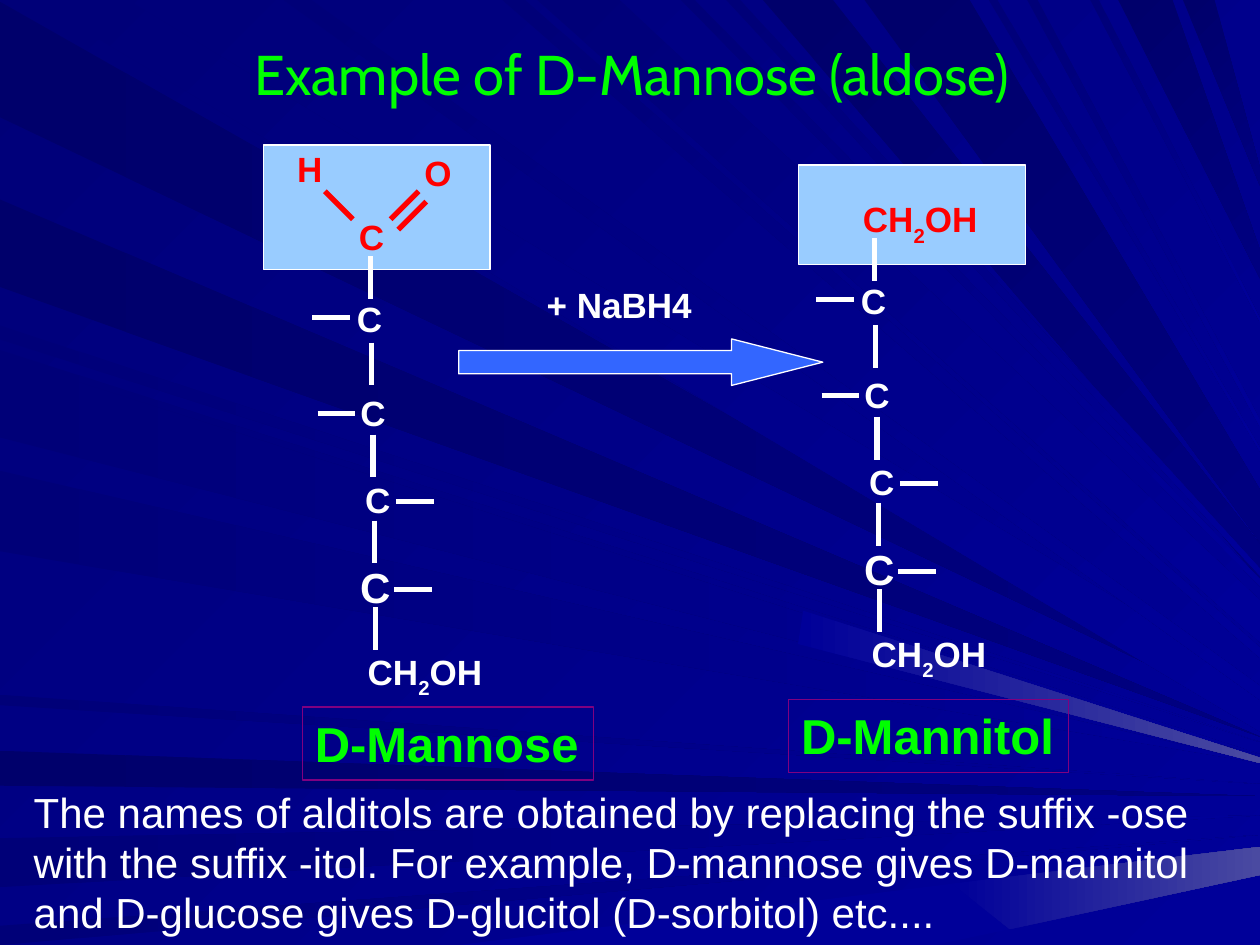
from lxml import etree
from pptx import Presentation
from pptx.dml.color import RGBColor
from pptx.enum import shapes, text
from pptx.oxml.ns import qn
from pptx.util import Pt

WHITE = RGBColor(0xFF, 0xFF, 0xFF)
RED = RGBColor(0xFF, 0, 0)
GREEN = RGBColor(0, 0xFF, 0)
PURPLE = RGBColor(0x80, 0, 0x80)
SKY = RGBColor(0x99, 0xCC, 0xFF)
ARROW_BLUE = RGBColor(0x33, 0x66, 0xFF)
MIDNIGHT = RGBColor(0, 0, 0x6B)
DUSK = RGBColor(0, 0, 0x78)
NAVY = RGBColor(0, 0, 0x80)
BLUE = RGBColor(0, 0, 0x99)
GLOW = RGBColor(0x4A, 0x4A, 0xA1)

TITLE = "Example of D-Mannose (aldose)"
NOTE = (
    "The names of alditols are obtained by replacing the suffix -ose\n"
    "with the suffix -itol. For example, D-mannose gives D-mannitol\n"
    "and D-glucose gives D-glucitol (D-sorbitol) etc...."
)

PAGE_WIDTH, PAGE_HEIGHT = 720, 540
LEFT_RAYS = [
    (MIDNIGHT, NAVY, [(1, 67, 410), (114, 164, 421), (429, 449, 455)]),
    (DUSK, BLUE, [
        (186, 194, 424), (479, 507, 466), (529, 540, 477), (200, 246, 431),
        (269, 315, 436), (397, 403, 448), (204, 250, 434),
    ]),
]
TOP_RAYS = [
    (MIDNIGHT, NAVY, [
        (436, 476, 321), (494, 554, 295), (639, 670, 151), (676, 694, 101),
    ]),
    (DUSK, BLUE, [
        (19, 73, 405), (287, 300, 373), (307, 354, 355), (389, 397, 333),
        (162, 178, 396), (415, 423, 327), (565, 570, 257), (587, 593, 242), (623, 628, 183),
    ]),
]
BEAMS = [
    (BLUE, BLUE, [(262, 540), (544, 505), (577, 531), (534, 540)]),
    (BLUE, GLOW, [(544, 505), (720, 484), (720, 500), (577, 531)]),
    (BLUE, GLOW, [(456, 368), (459, 349), (720, 433), (720, 436)]),
]

MOLECULE_OFFSETS = [(0, 0), (288, -10.2)]
CHAIN_ATOMS = [
    ("C", 196.8, 166.3, 20), ("C", 198.9, 220.3, 20), ("C", 201.6, 270, 20),
    ("C", 198.7, 317.5, 24), ("CH2OH", 203, 368, 20),
]
BOND_TOPS = [146.3, 195.8, 248.3, 297.5, 347]
SIDE_BONDS = [(178.5, 181.4), (181.5, 236.2), (226.2, 286.6), (225.4, 337)]
HEAD_BOXES = [(456.5, 94.3, 129.6, 56.9), (150.5, 82.8, 129.6, 71.3)]
HEAD_ATOMS = [("H", 162.7, 80.6), ("O", 235.4, 82.8), ("C", 198, 119.5), ("CH2OH", 486, 109.5)]
HEAD_BONDS = [(201.6, 125.3, -1), (223.2, 125.3, 1), (227.6, 131.2, 1)]
NAMES = [("D-Mannose", 172.8, 404, 166.3), ("D-Mannitol", 450.7, 399.6, 159.8)]


def blend(fill, start, end, angle):
    fill.gradient()
    fill.gradient_angle = (360 - angle) % 360
    for stop, colour in zip(fill.gradient_stops, (start, end)):
        stop.color.rgb = colour


def add_ray(group, start, end, angle, points):
    builder = group.shapes.build_freeform(*points[0], scale=Pt(1))
    builder.add_line_segments(points[1:], close=True)
    ray = builder.convert_to_shape()
    ray.shadow.inherit = False
    blend(ray.fill, start, end, angle)
    ray.line.fill.background()


def add_backdrop(slide):
    blend(slide.background.fill, DUSK, BLUE, 45)
    group = slide.shapes.add_group_shape()
    for start, end, rays in LEFT_RAYS:
        for top, bottom, tip in rays:
            add_ray(group, start, end, 0, [(0, top), (0, bottom), (PAGE_WIDTH, tip)])
    for start, end, rays in TOP_RAYS:
        for left, right, tip in rays:
            spread = (right - left) / 4
            far_edge = [(PAGE_WIDTH, tip - spread), (PAGE_WIDTH, tip + spread)]
            add_ray(group, start, end, 45, [(left, 0), (right, 0)] + far_edge)
    for start, end, points in BEAMS:
        add_ray(group, start, end, 0, points)


def add_panel(slide, kind, place, fill, line):
    panel = slide.shapes.add_shape(kind, *map(Pt, place))
    panel.shadow.inherit = False
    if fill is None:
        panel.fill.background()
    else:
        panel.fill.solid()
        panel.fill.fore_color.rgb = fill
    panel.line.color.rgb = line
    panel.line.width = Pt(0.75)
    return panel


def write(box, words, size, colour, bold=True):
    frame = box.text_frame
    frame.word_wrap = True
    frame.vertical_anchor = text.MSO_ANCHOR.TOP
    for index, line in enumerate(words.split("\n")):
        para = frame.add_paragraph() if index else frame.paragraphs[0]
        para.alignment = text.PP_ALIGN.LEFT
        for piece in filter(None, line.partition("2")):
            span = para.add_run()
            span.text = piece
            span.font.name = "Arial"
            span.font.size = Pt(size)
            span.font.bold = bold
            span.font.color.rgb = colour
            if piece == "2":
                span.font._element.set("baseline", "-30000")


def add_label(slide, words, place, size, colour, bold=True):
    write(slide.shapes.add_textbox(*map(Pt, place)), words, size, colour, bold)


def add_atom(slide, words, x, y, size, colour):
    width = 82 if words == "CH2OH" else 36
    add_label(slide, words, (x, y, width, size * 1.2 + 7.2), size, colour)


def add_bond(slide, x, y, dx, dy, colour):
    ends = map(Pt, (x, y, x + dx, y + dy))
    bond = slide.shapes.add_connector(shapes.MSO_CONNECTOR.STRAIGHT, *ends)
    bond.line.color.rgb = colour
    bond.line.width = Pt(3)
    etree.SubElement(bond._element.spPr, qn("a:effectLst"))


def add_chain(slide, dx, dy):
    for words, x, y, size in CHAIN_ATOMS:
        add_atom(slide, words, x + dx, y + dy, size, WHITE)
    for index, y in enumerate(BOND_TOPS):
        add_bond(slide, 211.6 + 0.8 * index + dx, y + dy, 0, 24.5, WHITE)
    for x, y in SIDE_BONDS:
        add_bond(slide, x + dx, y + dy, 21.6, 0, WHITE)


def format_title(slide):
    title = slide.shapes.title
    slide.shapes.element.append(title.element)
    title.left, title.top, title.width, title.height = map(Pt, (37.4, 15.1, 648, 53.3))
    title.text_frame.text = TITLE
    title.text_frame.vertical_anchor = text.MSO_ANCHOR.MIDDLE
    para = title.text_frame.paragraphs[0]
    para.alignment = text.PP_ALIGN.CENTER
    font = para.runs[0].font
    font.name, font.size, font.color.rgb = "Cabin", Pt(32), GREEN


def main():
    deck = Presentation()
    deck.slide_width, deck.slide_height = Pt(PAGE_WIDTH), Pt(PAGE_HEIGHT)
    slide = deck.slides.add_slide(deck.slide_layouts[5])
    add_backdrop(slide)
    format_title(slide)

    rectangle = shapes.MSO_SHAPE.RECTANGLE
    for place in HEAD_BOXES:
        add_panel(slide, rectangle, place, SKY, WHITE)
    for words, x, y in HEAD_ATOMS:
        add_atom(slide, words, x, y, 20, RED)
    for x, y, direction in HEAD_BONDS:
        add_bond(slide, x, y, 16 * direction, -16, RED)
    for offset in MOLECULE_OFFSETS:
        add_chain(slide, *offset)
    for words, x, y, width in NAMES:
        write(add_panel(slide, rectangle, (x, y, width, 41.8), None, PURPLE), words, 28, GREEN)

    add_label(slide, "+ NaBH4", (305.3, 158.4, 102, 31), 20, WHITE)
    arrow = add_panel(slide, shapes.MSO_SHAPE.RIGHT_ARROW, (262.1, 193.7, 208.1, 26.6), ARROW_BLUE, WHITE)
    arrow.adjustments[1] = 1.96
    add_label(slide, NOTE, (12.2, 445.7, 707.8, 94.3), 24, WHITE, bold=False)
    deck.save("out.pptx")


if __name__ == "__main__":
    main()
